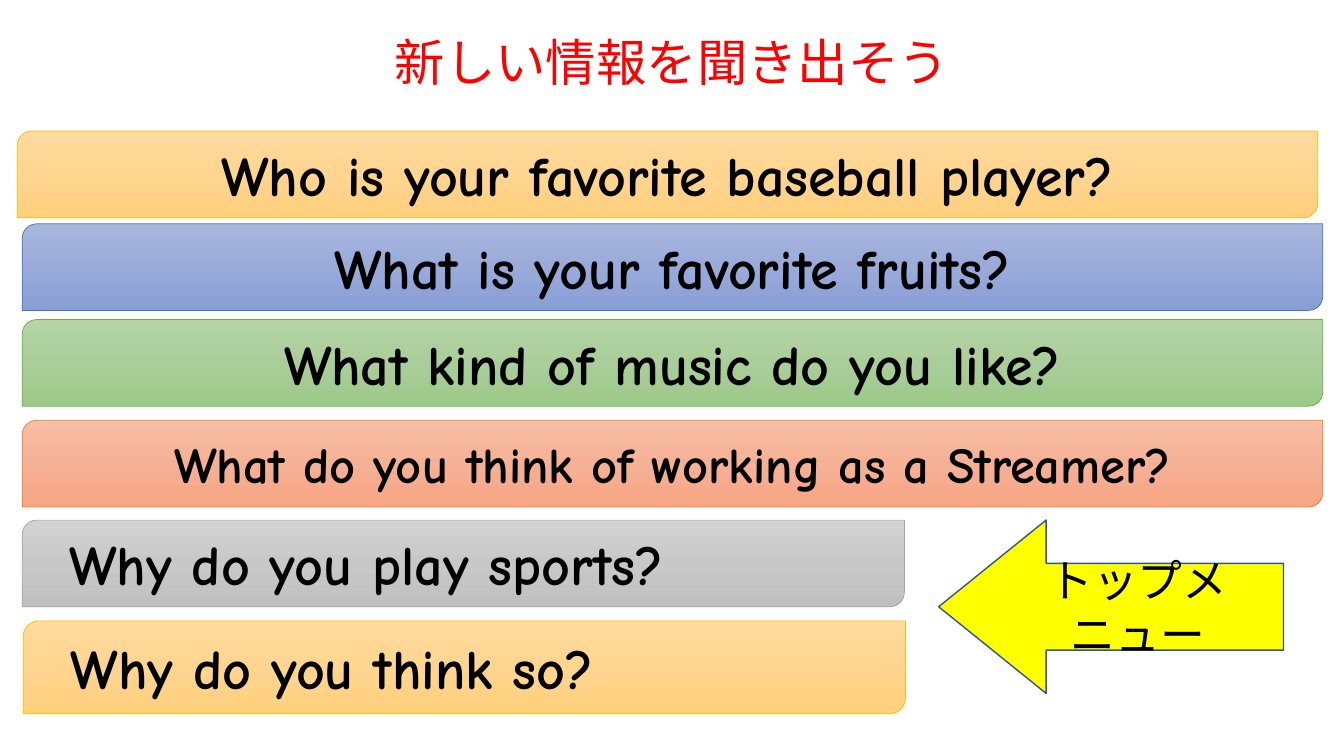
import copy
from dataclasses import dataclass

import lxml.etree
import pptx
import pptx.dml.color
import pptx.enum.shapes
import pptx.enum.text
import pptx.oxml.ns
import pptx.util

RGBColor = pptx.dml.color.RGBColor
Align = pptx.enum.text.PP_ALIGN
Kind = pptx.enum.shapes.MSO_SHAPE
qn = pptx.oxml.ns.qn

WIDE = pptx.util.Inches(13.33)
TALL = pptx.util.Inches(7.5)
LATIN = "Comic Neue"
KANA = "Noto Sans CJK JP"

BLACK = RGBColor(0x00, 0x00, 0x00)
RED = RGBColor(0xFF, 0x00, 0x00)
YELLOW = RGBColor(0xFF, 0xFF, 0x00)
NAVY = RGBColor(0x32, 0x54, 0x91)


@dataclass(frozen=True)
class Box:
    left: float
    top: float
    width: float
    height: float

    def place(self) -> tuple[int, int, int, int]:
        return (
            int(WIDE * self.left / 100),
            int(TALL * self.top / 100),
            int(WIDE * self.width / 100),
            int(TALL * self.height / 100),
        )


@dataclass(frozen=True)
class Tint:
    edge: RGBColor
    stops: tuple[RGBColor, RGBColor, RGBColor]


@dataclass(frozen=True)
class Bar:
    text: str
    box: Box
    tint: Tint
    size: int = 40
    indent: float = 0


GOLD = Tint(RGBColor(0xFF, 0xC0, 0x00), (
    RGBColor(0xFF, 0xDB, 0x9E), RGBColor(0xFF, 0xD5, 0x90), RGBColor(0xFF, 0xD0, 0x7C)))
BLUE = Tint(RGBColor(0x44, 0x72, 0xC4), (
    RGBColor(0xA8, 0xB7, 0xDF), RGBColor(0x9A, 0xAB, 0xD9), RGBColor(0x88, 0x9E, 0xD7)))
GREEN = Tint(RGBColor(0x70, 0xAD, 0x47), (
    RGBColor(0xB5, 0xD5, 0xA7), RGBColor(0xAA, 0xCE, 0x9A), RGBColor(0x9C, 0xC9, 0x87)))
CORAL = Tint(RGBColor(0xED, 0x7D, 0x31), (
    RGBColor(0xF7, 0xBD, 0xA5), RGBColor(0xF5, 0xB1, 0x96), RGBColor(0xF8, 0xA5, 0x82)))
GREY = Tint(RGBColor(0xA5, 0xA5, 0xA5), (
    RGBColor(0xD2, 0xD2, 0xD2), RGBColor(0xC8, 0xC8, 0xC8), RGBColor(0xC0, 0xC0, 0xC0)))

LONG = 96.77
SHORT = 65.64
HIGH = 11.47
INDENT = 3.2

BARS = (
    Bar("Who is your favorite baseball player?", Box(1.28, 17.33, LONG, HIGH), GOLD),
    Bar("What is your favorite fruits?", Box(1.65, 29.6, LONG, HIGH), BLUE),
    Bar("What kind of music do you like?", Box(1.65, 42.27, LONG, HIGH), GREEN),
    Bar("What do you think of working as a Streamer?", Box(1.65, 55.6, LONG, HIGH), CORAL, 36),
    Bar("Why do you play sports?", Box(1.65, 68.8, SHORT, HIGH), GREY, indent=INDENT),
    Bar("Why do you think so?", Box(1.73, 82.13, SHORT, 12.27), GOLD, indent=INDENT),
)
TITLE = Box(0, 1.6, 100, 14)
ARROW = Box(69.84, 68.8, 25.66, 22.93)


def write(shape, text: str, size: int, face: str, ink: RGBColor,
          bold: bool = False, indent: float = 0):
    frame = shape.text_frame
    frame.word_wrap = True
    frame.vertical_anchor = pptx.enum.text.MSO_ANCHOR.MIDDLE
    frame.margin_left = int(WIDE * indent / 100)
    frame.margin_right = frame.margin_top = frame.margin_bottom = 0
    line = frame.paragraphs[0]
    line.alignment = Align.LEFT if indent else Align.CENTER
    run = line.add_run()
    run.text = text
    run.font.size = pptx.util.Pt(size)
    run.font.bold = bold
    run.font.name = face
    run.font.color.rgb = ink
    lxml.etree.SubElement(run.font._element, qn("a:ea"), typeface=face)
    return line


def add_form(slide, kind: Kind, box: Box, edge: RGBColor, weight: float):
    shape = slide.shapes.add_shape(kind, *box.place())
    shape.shadow.inherit = False
    shape.line.color.rgb = edge
    shape.line.width = pptx.util.Pt(weight)
    return shape


def blend(shape, tint: Tint) -> None:
    shape.fill.gradient()
    shape.fill.gradient_angle = 270
    stops = shape._element.spPr.find(".//" + qn("a:gsLst"))
    stops.append(copy.deepcopy(stops[0]))
    for step, (stop, ink) in enumerate(zip(shape.fill.gradient_stops, tint.stops)):
        stop.position = step / 2
        stop.color.rgb = ink


def add_bar(slide, bar: Bar) -> None:
    shape = add_form(slide, Kind.ROUND_2_DIAG_RECTANGLE, bar.box, bar.tint.edge, 0.5)
    blend(shape, bar.tint)
    write(shape, bar.text, bar.size, LATIN, BLACK, True, bar.indent)


def add_title(slide) -> None:
    shape = slide.shapes.add_textbox(*TITLE.place())
    line = write(shape, "新しい情報を聞き出そう", 36, KANA, RED)
    line.line_spacing = 0.9


def add_arrow(slide) -> None:
    shape = add_form(slide, Kind.LEFT_ARROW, ARROW, NAVY, 1)
    shape.adjustments[0] = 0.5
    shape.adjustments[1] = 0.62
    shape.fill.solid()
    shape.fill.fore_color.rgb = YELLOW
    write(shape, "トップメニュー", 32, KANA, BLACK)


def main() -> None:
    deck = pptx.Presentation()
    deck.slide_width = WIDE
    deck.slide_height = TALL
    slide = deck.slides.add_slide(deck.slide_layouts[6])
    add_title(slide)
    for bar in BARS:
        add_bar(slide, bar)
    add_arrow(slide)
    deck.save("out.pptx")


if __name__ == "__main__":
    main()
